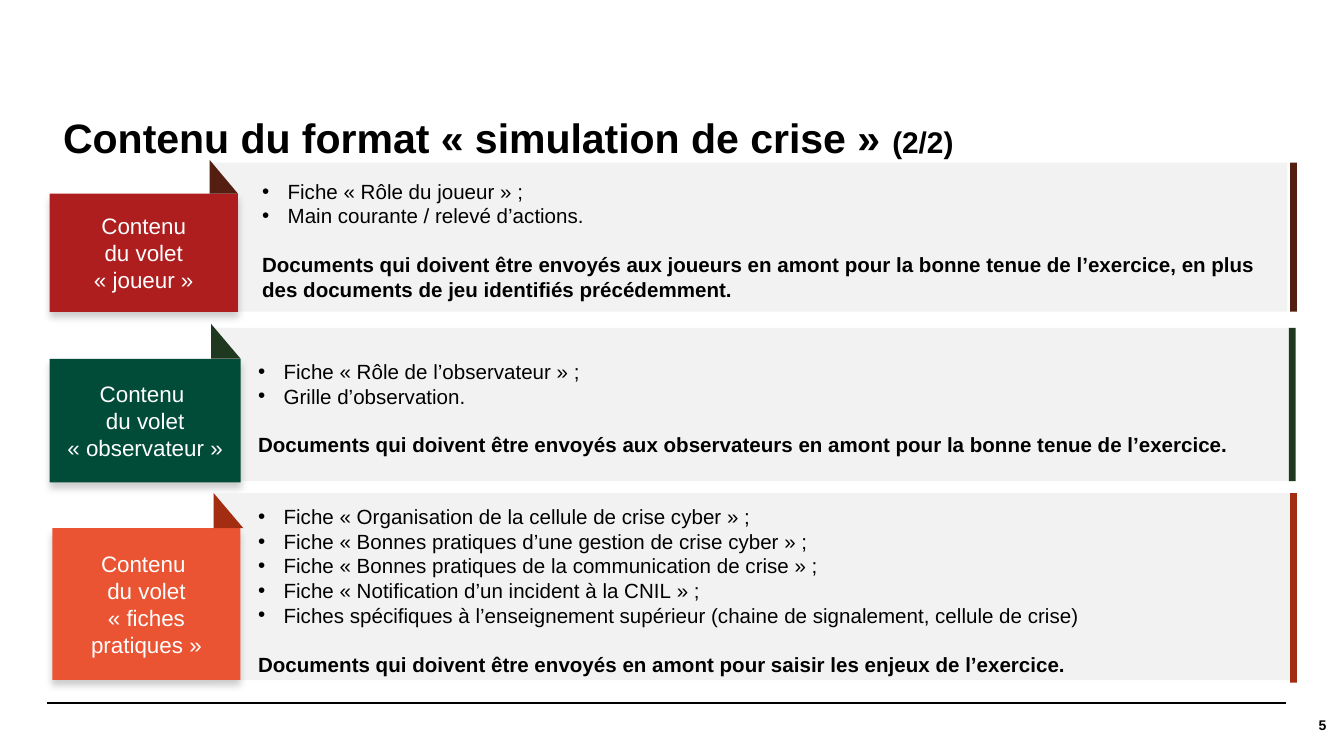
from lxml import etree
from pptx import Presentation
from pptx import util as u
from pptx.dml.color import RGBColor
from pptx.enum import shapes, text
from pptx.oxml import ns

Inches, Pt = u.Inches, u.Pt
RECT = shapes.MSO_SHAPE.RECTANGLE
TRIANGLE = shapes.MSO_SHAPE.RIGHT_TRIANGLE
LEFT, CENTER, RIGHT = text.PP_ALIGN.LEFT, text.PP_ALIGN.CENTER, text.PP_ALIGN.RIGHT
TOP, MIDDLE = text.MSO_ANCHOR.TOP, text.MSO_ANCHOR.MIDDLE
NBSP = chr(160)


def color(value):
    return RGBColor.from_string(value)


def add_xml(parent, tag, **attrs):
    return etree.SubElement(parent, ns.qn(tag), attrs)


def quoted(words):
    """Keep French quotation marks on the line of the words they enclose."""
    return words.replace("« ", "«" + NBSP).replace(" »", NBSP + "»")


class Deck:
    FONT, BLACK, WHITE, PANEL = "Arial", "000000", "FFFFFF", "F2F2F2"
    INDENT = 0.19  # bullet hanging indent
    LINE_GAP = 13  # one 11 pt line

    def __init__(self):
        self.prs = Presentation()
        self.prs.slide_width = Inches(10)
        self.prs.slide_height = Inches(10) * 9 // 16
        self.s = self.prs.slides.add_slide(self.prs.slide_layouts[4])

    def place(self, sp, box):
        sp.left, sp.top, sp.width, sp.height = map(Inches, box)

    def frame(self, sp, anchor, side=0.1, edge=0.05):
        tf = sp.text_frame
        tf.word_wrap = True
        tf.auto_size = text.MSO_AUTO_SIZE.NONE
        tf.vertical_anchor = anchor
        tf.margin_left = tf.margin_right = Inches(side)
        tf.margin_top = tf.margin_bottom = Inches(edge)
        return tf

    def paragraph(self, tf, first, align=LEFT, before=0, spacing=1.0):
        p = tf.paragraphs[0] if first else tf.add_paragraph()
        p.alignment, p.line_spacing = align, spacing
        p.space_before, p.space_after = Pt(before), Pt(0)
        return p

    def run(self, p, words, size, bold=False, fill=BLACK):
        r = p.add_run()
        r.text = words
        r.font.name, r.font.size, r.font.bold = self.FONT, Pt(size), bold
        r.font.color.rgb = color(fill)

    def bullet(self, p, char=None):
        pPr = p._p.get_or_add_pPr()
        indent = Inches(self.INDENT) if char else 0
        pPr.set("marL", str(indent))
        pPr.set("indent", str(-indent))
        if char:
            add_xml(pPr, "a:buFont", typeface=self.FONT)
            add_xml(pPr, "a:buChar", char=char)
        else:
            add_xml(pPr, "a:buNone")

    def title(self, box, runs):
        sp = self.s.shapes.title
        self.place(sp, box)
        p = self.paragraph(self.frame(sp, MIDDLE), True, spacing=0.9)
        p._p.get_or_add_pPr().set("marL", str(Inches(0.02)))
        for words, size in runs:
            self.run(p, words, size, bold=True)

    def shape(self, kind, box, fill):
        sp = self.s.shapes.add_shape(kind, *map(Inches, box))
        sp.shadow.inherit = False
        sp.fill.solid()
        sp.fill.fore_color.rgb = color(fill)
        sp.line.fill.background()
        return sp

    def label(self, box, fill, lines, side):
        sp = self.shape(RECT, box, fill)
        effects = sp._element.spPr.find(ns.qn("a:effectLst"))
        shadow = add_xml(effects, "a:outerShdw", blurRad=str(Pt(4)), dist=str(Pt(3)),
                         dir="5400000", algn="t", rotWithShape="0")
        add_xml(add_xml(shadow, "a:srgbClr", val=self.BLACK), "a:alpha", val="20000")
        tf = self.frame(sp, MIDDLE, side)
        for i, line in enumerate(lines):
            self.run(self.paragraph(tf, i == 0, CENTER), quoted(line), 12, fill=self.WHITE)

    def bullets(self, idx, box, items, note):
        sp = self.s.placeholders[idx]
        self.place(sp, box)
        self.s.shapes._spTree.append(sp._element)  # bring in front of the panel
        tf = self.frame(sp, TOP)
        for i, item in enumerate(items):
            p = self.paragraph(tf, i == 0)
            self.bullet(p, "•")
            self.run(p, quoted(item), 11)
        p = self.paragraph(tf, False, before=self.LINE_GAP)
        self.bullet(p)
        self.run(p, note, 11, bold=True)

    def footer(self, number):
        line = self.s.shapes.add_connector(shapes.MSO_CONNECTOR.STRAIGHT, Inches(0.35),
                                           Inches(5.23), Inches(9.57), Inches(5.23))
        line.line.color.rgb, line.line.width = color(self.BLACK), Pt(0.8)
        add_xml(line._element.spPr, "a:effectLst")
        sp = self.s.shapes.add_textbox(*map(Inches, (8.39, 5.2, 1.48, 0.39)))
        p = self.paragraph(self.frame(sp, MIDDLE, 0, 0), True, RIGHT)
        self.run(p, number, 7.5, bold=True)

    def section(self, idx, d):
        self.shape(RECT, d["panel"], self.PANEL)
        self.label(d["tab"], d["fill"], d["label"], d["side"])
        self.shape(TRIANGLE, d["fold"], d["dark"])
        self.shape(RECT, d["strip"], d["dark"])
        self.bullets(idx, d["body"], d["items"], d["note"])


SECTIONS = [
    dict(fill="AE1E1E", dark="541F10", side=0.1,
         panel=(1.56, 1.21, 8.02, 1.11), tab=(0.37, 1.44, 1.4, 0.88),
         fold=(1.56, 1.19, 0.21, 0.25), strip=(9.6, 1.21, 0.05, 1.11),
         body=(1.85, 1.28, 7.8, 1.03),
         label=["Contenu", "du volet", "« joueur »"],
         items=["Fiche « Rôle du joueur » ;", "Main courante / relevé d’actions."],
         note="Documents qui doivent être envoyés aux joueurs en amont pour la bonne tenue "
              "de l’exercice, en plus des documents de jeu identifiés précédemment."),
    dict(fill="004C38", dark="1F3921", side=0,
         panel=(1.57, 2.44, 8.02, 1.14), tab=(0.37, 2.67, 1.42, 0.92),
         fold=(1.57, 2.41, 0.22, 0.26), strip=(9.59, 2.44, 0.05, 1.14),
         body=(1.82, 2.62, 7.8, 0.85),
         label=["Contenu ", "du volet", "« observateur »"],
         items=["Fiche « Rôle de l’observateur » ;", "Grille d’observation."],
         note="Documents qui doivent être envoyés aux observateurs en amont pour la bonne "
              "tenue de l’exercice."),
    dict(fill="EA5433", dark="A32D11", side=0,
         panel=(1.59, 3.67, 8.02, 1.39), tab=(0.39, 3.93, 1.4, 1.13),
         fold=(1.59, 3.67, 0.22, 0.26), strip=(9.6, 3.67, 0.05, 1.41),
         body=(1.82, 3.7, 7.51, 1.39),
         label=["Contenu ", "du volet", "« fiches pratiques »"],
         items=["Fiche « Organisation de la cellule de crise cyber » ;",
                "Fiche « Bonnes pratiques d’une gestion de crise cyber » ;",
                "Fiche « Bonnes pratiques de la communication de crise » ;",
                "Fiche « Notification d’un incident à la CNIL » ;",
                "Fiches spécifiques à l’enseignement supérieur (chaine de signalement, "
                "cellule de crise)"],
         note="Documents qui doivent être envoyés en amont pour saisir les enjeux de "
              "l’exercice."),
]


def main():
    deck = Deck()
    # Title and footer
    deck.title((0.35, 0.75, 9.21, 0.59),
               [("Contenu du format « simulation de crise » ", 22), ("(2/2)", 16)])
    deck.footer("5")
    # One panel per section, each with its own list placeholder
    for idx, section in enumerate(SECTIONS, 1):
        deck.section(idx, section)
    # Remove the unused placeholder
    spare = deck.s.placeholders[4]._element
    spare.getparent().remove(spare)
    deck.prs.save("out.pptx")


if __name__ == "__main__":
    main()
